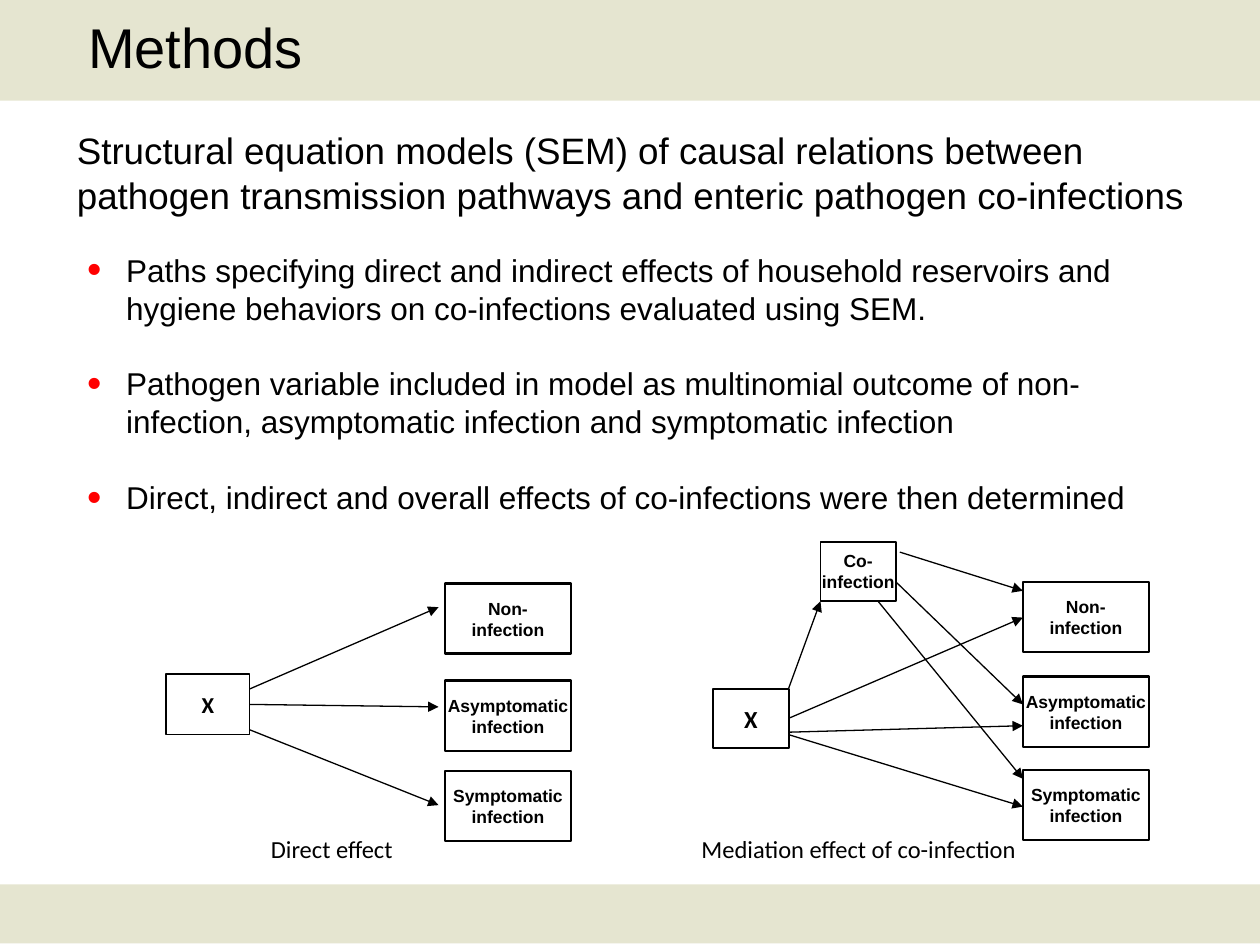
import dataclasses

import lxml.etree
import pptx
import pptx.dml.color
import pptx.enum.shapes
import pptx.enum.text
import pptx.oxml.ns
import pptx.util

Cm, Pt = pptx.util.Cm, pptx.util.Pt
qn = pptx.oxml.ns.qn
Align = pptx.enum.text.PP_ALIGN
Anchor = pptx.enum.text.MSO_ANCHOR
RECTANGLE = pptx.enum.shapes.MSO_SHAPE.RECTANGLE
STRAIGHT = pptx.enum.shapes.MSO_CONNECTOR.STRAIGHT


@dataclasses.dataclass(frozen=True)
class Theme:
    ink = pptx.dml.color.RGBColor(0, 0, 0)
    band = pptx.dml.color.RGBColor(0xE5, 0xE5, 0xD0)
    bullet = "FF0000"
    heading_font = "Arial"
    diagram_font = "Calibri"
    title = 32
    lead = 21
    body = 18
    caption = 14
    label = 10


theme = Theme()


def write(frame, text, *, size, font=theme.heading_font, bold=False,
          align=Align.LEFT, anchor=Anchor.TOP, gap=0, bullets=False, wrap=True):
    """Fill the frame with one paragraph per line of text."""
    frame.word_wrap = wrap
    frame.auto_size = pptx.enum.text.MSO_AUTO_SIZE.NONE
    frame.vertical_anchor = anchor
    for number, line in enumerate(text.split("\n")):
        para = frame.add_paragraph() if number else frame.paragraphs[0]
        para.alignment = align
        para.space_before = Pt(gap if number else 0)
        if bullets:
            properties = para._p.get_or_add_pPr()
            properties.set("marL", str(Cm(0.79)))
            properties.set("indent", str(-Cm(0.79)))
            color = lxml.etree.SubElement(properties, qn("a:buClr"))
            lxml.etree.SubElement(color, qn("a:srgbClr"), val=theme.bullet)
            lxml.etree.SubElement(properties, qn("a:buSzPct"), val="130000")
            lxml.etree.SubElement(properties, qn("a:buFont"), typeface=theme.heading_font)
            lxml.etree.SubElement(properties, qn("a:buChar"), char="•")
        span = para.add_run()
        span.text = line
        span.font.name = font
        span.font.size = Pt(size)
        span.font.bold = bold
        span.font.color.rgb = theme.ink


def place(shape, left, top, width, height):
    shape.left, shape.top = Cm(left), Cm(top)
    shape.width, shape.height = Cm(width), Cm(height)


deck = pptx.Presentation()
deck.slide_width, deck.slide_height = Cm(25.4), Cm(19.05)
page = deck.slides.add_slide(deck.slide_layouts[1])
title, body = page.placeholders

# Bands behind the text
for top, height in ((17.83, 1.19), (0, 2.03)):
    band = page.shapes.add_shape(RECTANGLE, 0, Cm(top), deck.slide_width, Cm(height))
    band.shadow.inherit = False
    band.fill.solid()
    band.fill.fore_color.rgb = theme.band
    band.line.fill.background()
    title.element.addprevious(band.element)

# Title, lead sentence and bullet list
place(title, 1.52, 0.13, 23.88, 1.63)
write(title.text_frame, "Methods", size=theme.title)

lead = page.shapes.add_textbox(Cm(1.3), Cm(2.46), Cm(23.32), Cm(2.06))
write(lead.text_frame,
      "Structural equation models (SEM) of causal relations between "
      "pathogen transmission pathways and enteric pathogen co-infections",
      size=theme.lead)

place(body, 1.5, 4.93, 22.43, 5.64)
write(body.text_frame, "\n".join((
    "Paths specifying direct and indirect effects of household reservoirs and "
    "hygiene behaviors on co-infections evaluated using SEM.",
    "Pathogen variable included in model as multinomial outcome of "
    "non-infection, asymptomatic infection and symptomatic infection",
    "Direct, indirect and overall effects of co-infections were then determined",
)), size=theme.body, gap=21.7, bullets=True)

# Path diagrams: left, top, width, height, text, line width, format
exposure = dict(font=theme.diagram_font, bold=True)
label = dict(size=theme.label, bold=True)
nodes = [
    (3.35, 13.59, 1.68, 1.22, "X", 1, dict(exposure, size=13)),
    (14.38, 13.89, 1.52, 1.19, "X", 1, dict(exposure, size=14)),
    (16.54, 10.92, 1.52, 1.19, "Co-\ninfection", 1, label),
]
outcomes = ("Non-\ninfection", "Asymptomatic\ninfection", "Symptomatic\ninfection")
for left, tops in ((8.97, (11.76, 13.72, 15.54)), (20.62, (11.73, 13.64, 15.52))):
    for top, outcome in zip(tops, outcomes):
        nodes.append((left, top, 2.54, 1.42, outcome, 1.38, label))

for left, top, width, height, text, line_width, style in nodes:
    box = page.shapes.add_shape(RECTANGLE, Cm(left), Cm(top), Cm(width), Cm(height))
    box.shadow.inherit = False
    box.fill.background()
    box.line.color.rgb = theme.ink
    box.line.width = Pt(line_width)
    frame = box.text_frame
    frame.margin_left = frame.margin_right = frame.margin_top = frame.margin_bottom = 0
    write(frame, text, align=Align.CENTER, anchor=Anchor.MIDDLE, wrap=False, **style)

arrows = (
    # Direct effect
    (5.03, 13.89, 8.84, 12.24),
    (5.03, 14.2, 8.84, 14.25),
    (5.03, 14.71, 8.84, 16.23),
    # Mediation: exposure to co-infection and outcomes
    (15.9, 13.87, 16.54, 12.12),
    (15.9, 14.48, 20.62, 12.45),
    (15.9, 14.76, 20.62, 14.63),
    (15.9, 14.81, 20.62, 16.26),
    # Mediation: co-infection to outcomes
    (18.14, 11.13, 20.62, 11.91),
    (18.06, 11.73, 20.62, 14.2),
    (17.7, 12.12, 20.62, 15.7),
)
for ends in arrows:
    arrow = page.shapes.add_connector(STRAIGHT, *map(Cm, ends))
    arrow.line.color.rgb = theme.ink
    arrow.line.width = Pt(0.75)
    lxml.etree.SubElement(arrow.line._get_or_add_ln(), qn("a:tailEnd"), type="triangle")
    lxml.etree.SubElement(arrow.element.spPr, qn("a:effectLst"))

for left, caption in ((5.21, "Direct effect"), (13.89, "Mediation effect of co-infection")):
    box = page.shapes.add_textbox(Cm(left), Cm(16.69), Cm(7.04), Cm(0.86))
    write(box.text_frame, caption, size=theme.caption, font=theme.diagram_font)

deck.save("out.pptx")
